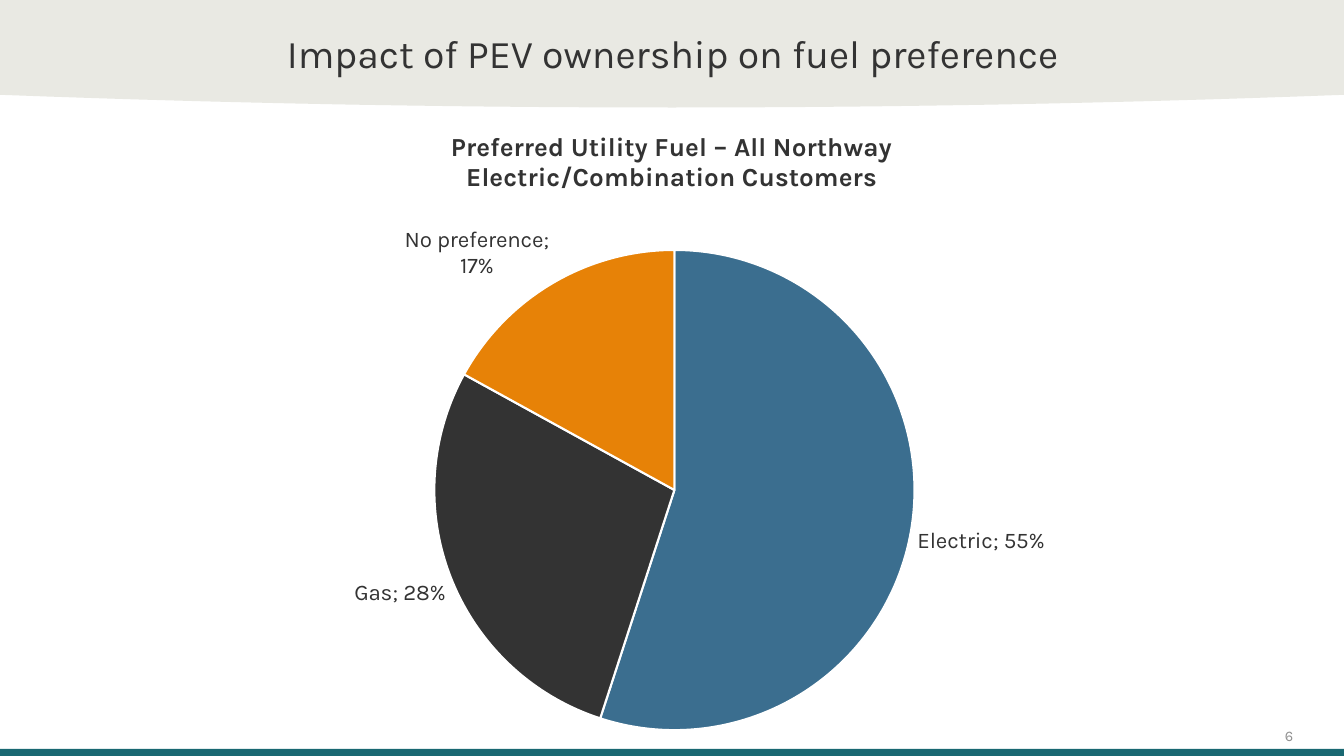
import pptx
import pptx.chart.data
import pptx.dml.color
import pptx.enum.chart
import pptx.enum.shapes
import pptx.enum.text
import pptx.oxml
import pptx.oxml.ns
import pptx.util

Cm, Pt = pptx.util.Cm, pptx.util.Pt
WIDTH, HEIGHT = 33.87, 19.05
TITLE_ONLY = 5

COLORS = {
    "text": "333333", "muted": "909090", "band": "E9E9E3", "footer": "196872",
    "Electric": "3B6E8F", "Gas": "333333", "No preference": "E78207",
    "slice edge": "FFFFFF",
}
FUEL_SHARES = {"Electric": 0.55, "Gas": 0.28, "No preference": 0.17}


def color(name):
    return pptx.dml.color.RGBColor.from_string(COLORS[name])


def set_layout(parent, index, fractions, inner=False):
    """Place a chart part by fractions of the chart's width and height."""
    for old in parent.findall(pptx.oxml.ns.qn("c:layout")):
        parent.remove(old)
    target = '<c:layoutTarget val="inner"/>' if inner else ""
    modes = "".join(f'<c:{key}Mode val="edge"/>' for key in "xy")
    values = "".join(f'<c:{key} val="{value}"/>' for key, value in fractions.items())
    parent.insert(index, pptx.oxml.parse_xml(
        f'<c:layout {pptx.oxml.ns.nsdecls("c")}><c:manualLayout>'
        f"{target}{modes}{values}</c:manualLayout></c:layout>"))


class SlideBuilder:
    font_name = "Karla"

    def __init__(self, slide):
        self.slide = slide

    def style(self, font, size, color_name="text", bold=False):
        font.name = self.font_name
        font.size = Pt(size)
        font.bold = bold
        font.color.rgb = color(color_name)

    def paint(self, shape, color_name):
        shape.shadow.inherit = False
        shape.fill.solid()
        shape.fill.fore_color.rgb = color(color_name)
        shape.line.fill.background()

    def text(self, box, wording, size, align, anchor, color_name="text"):
        frame = box.text_frame
        frame.word_wrap = True
        frame.margin_left = frame.margin_right = 0
        frame.margin_top = frame.margin_bottom = 0
        frame.vertical_anchor = anchor
        frame.text = wording
        paragraph = frame.paragraphs[0]
        paragraph.alignment = align
        self.style(paragraph.runs[0].font, size, color_name)

    def footer_bar(self, height):
        bar = self.slide.shapes.add_shape(
            pptx.enum.shapes.MSO_SHAPE.RECTANGLE,
            0, Cm(HEIGHT - height), Cm(WIDTH), Cm(height))
        self.paint(bar, "footer")

    def curved_band(self, edge_height, middle_height, steps=60):
        """Draw the header band, whose lower edge is a shallow parabola."""
        lower_edge = []
        for step in range(steps + 1):
            offset = 1 - 2 * step / steps
            drop = middle_height - (middle_height - edge_height) * offset ** 2
            lower_edge.append((Cm(WIDTH * (1 - step / steps)), Cm(drop)))
        outline = self.slide.shapes.build_freeform(0, 0)
        outline.add_line_segments([(Cm(WIDTH), 0)] + lower_edge, close=True)
        self.paint(outline.convert_to_shape(), "band")

    def title(self, wording, left, top, width, height):
        title = self.slide.shapes.title
        title.left, title.top = Cm(left), Cm(top)
        title.width, title.height = Cm(width), Cm(height)
        self.text(title, wording, 28, pptx.enum.text.PP_ALIGN.CENTER,
                  pptx.enum.text.MSO_ANCHOR.MIDDLE)
        self.slide.shapes.element.append(title.element)  # in front of the band

    def page_number(self, number, left, top, width, height):
        box = self.slide.shapes.add_textbox(Cm(left), Cm(top), Cm(width), Cm(height))
        self.text(box, number, 10.5, pptx.enum.text.PP_ALIGN.RIGHT,
                  pptx.enum.text.MSO_ANCHOR.BOTTOM, "muted")

    def pie(self, heading, shares, left, top, width, height):
        data = pptx.chart.data.CategoryChartData(number_format="0%")
        data.categories = list(shares)
        data.add_series("Series 1", list(shares.values()))
        chart = self.slide.shapes.add_chart(
            pptx.enum.chart.XL_CHART_TYPE.PIE,
            Cm(left), Cm(top), Cm(width), Cm(height), data).chart
        self.style(chart.font, 10)
        chart.has_legend = False

        chart.has_title = True
        chart.chart_title.text_frame.text = heading
        for line in chart.chart_title.text_frame.paragraphs:
            line.alignment = pptx.enum.text.PP_ALIGN.CENTER
            self.style(line.runs[0].font, 18.6, bold=True)
        chart.chart_title.include_in_layout = False
        set_layout(chart.chart_title._element, 1, {"x": 0.25, "y": 0.03})

        plot = chart.plots[0]
        plot.vary_by_categories = True
        set_layout(plot._element.getparent(), 0,
                   {"x": 0.235, "y": 0.223, "w": 0.536, "h": 0.754}, inner=True)
        for index, fuel in enumerate(shares):
            slice_format = plot.series[0].points[index].format
            slice_format.fill.solid()
            slice_format.fill.fore_color.rgb = color(fuel)
            slice_format.line.color.rgb = color("slice edge")
            slice_format.line.width = Pt(1.5)

        labels = plot.series[0].data_labels
        self.style(labels.font, 16)
        labels.number_format = "0%"
        labels.number_format_is_linked = False
        labels.position = pptx.enum.chart.XL_LABEL_POSITION.OUTSIDE_END
        labels.show_value = True
        labels.show_category_name = True
        separator = pptx.oxml.parse_xml(
            f'<c:separator {pptx.oxml.ns.nsdecls("c")}>; </c:separator>')
        bubble_size = labels._element.find(pptx.oxml.ns.qn("c:showBubbleSize"))
        bubble_size.addnext(separator)


def main():
    deck = pptx.Presentation()
    deck.slide_width, deck.slide_height = Cm(WIDTH), Cm(HEIGHT)
    builder = SlideBuilder(deck.slides.add_slide(deck.slide_layouts[TITLE_ONLY]))
    builder.footer_bar(0.18)
    builder.page_number("6", 24.69, 17.75, 7.9, 1.02)
    builder.pie("Preferred Utility Fuel – All Northway\nElectric/Combination Customers",
                FUEL_SHARES, 5.64, 2.72, 22.58, 16.05)
    builder.curved_band(2.39, 2.71)
    builder.title("Impact of PEV ownership on fuel preference", 6.6, 0.72, 20.7, 1.2)
    deck.save("out.pptx")


if __name__ == "__main__":
    main()
